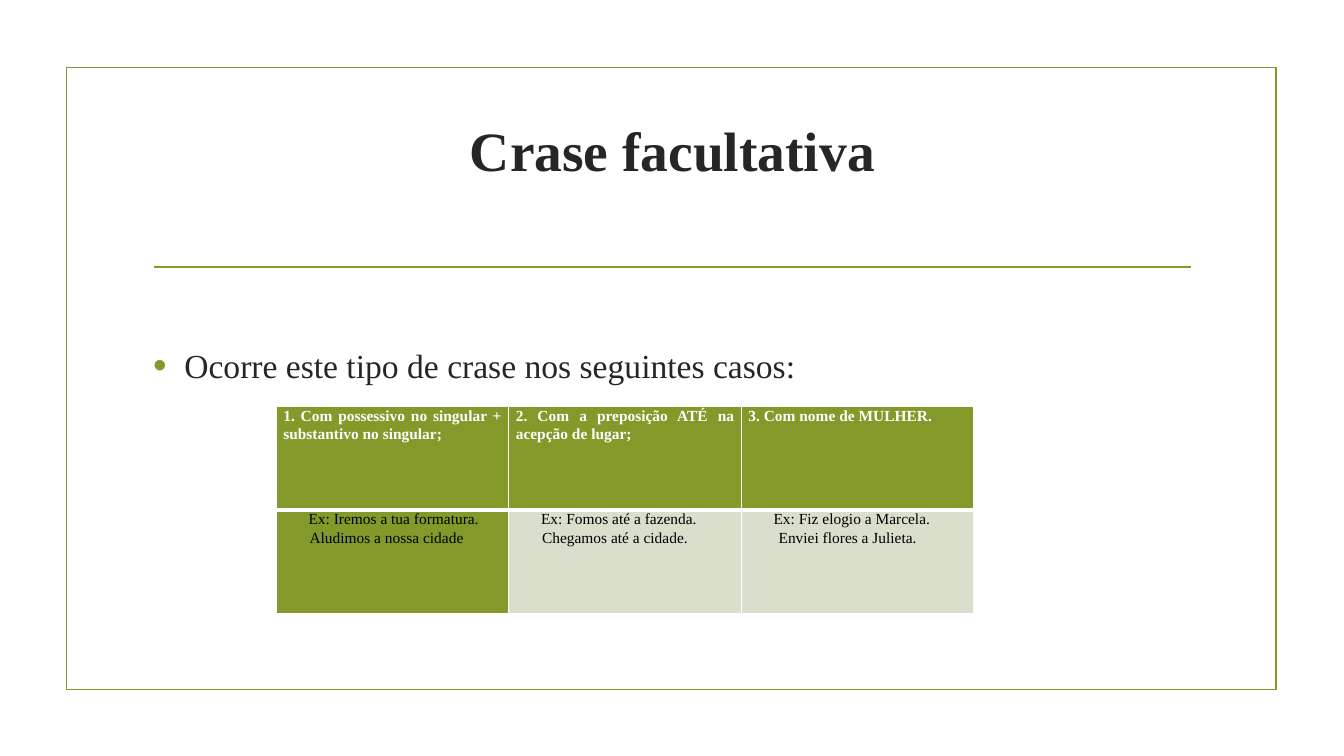
"""Build the slide on optional crase with its table of three cases."""
from lxml import etree
from pptx import Presentation
from pptx.dml.color import RGBColor
from pptx.enum import shapes, text
from pptx.oxml import parse_xml
from pptx.oxml.ns import nsdecls, qn
from pptx.util import Emu, Inches, Pt

COLORS = {"green": "83992A", "ink": "262626", "white": "FFFFFF", "black": "000000", "sage": "D9DECD"}
TITLE = "Crase facultativa"
INTRO = "Ocorre este tipo de crase nos seguintes casos:"
CASES = [
    ("1. Com possessivo no singular + substantivo no singular;",
     [("Ex: Iremos a tua formatura.", 0.25), ("Aludimos a nossa cidade", 0.26)], "green"),
    ("2. Com a preposição ATÉ na acepção de lugar;",
     [("Ex: Fomos até a fazenda.", 0.25), ("Chegamos até a cidade.", 0.26)], "sage"),
    ("3. Com nome de MULHER.",
     [("Ex: Fiz elogio a Marcela.", 0.25), ("Enviei flores a Julieta.", 0.3)], "sage"),
]
TITLE_FONT = {"size": Pt(39.6), "bold": True}
INTRO_FONT = {"size": Pt(24), "bold": False}
HEADING_FONT = {"size": Pt(11), "bold": True}
EXAMPLE_FONT = {"size": Pt(11), "bold": False}
CELL_FORMAT = {"margin_left": Inches(0.07), "margin_right": Inches(0.07), "margin_top": 0, "margin_bottom": 0}


def apply(target, values):
    for name, value in values.items():
        setattr(target, name, value)


def rgb(name):
    return RGBColor.from_string(COLORS[name])


def write(paragraph, words, font, color):
    run = paragraph.add_run()
    run.text = words
    apply(run.font, {"name": "Times New Roman", **font})
    run.font.color.rgb = rgb(color)


def stroke(line):
    line.color.rgb = rgb("green")
    line.width = Pt(1.25)


def add_bullet(paragraph):
    properties = paragraph._p.get_or_add_pPr()
    apply_indent = {"marL": Inches(0.31), "indent": Inches(-0.31)}
    for name, value in apply_indent.items():
        properties.set(name, str(value))
    for tag in (f'<a:buClr {nsdecls("a")}><a:srgbClr val="{COLORS["green"]}"/></a:buClr>',
                f'<a:buSzPct {nsdecls("a")} val="115000"/>',
                f'<a:buFont {nsdecls("a")} typeface="Arial"/>',
                f'<a:buChar {nsdecls("a")} char="•"/>'):
        properties.append(parse_xml(tag))


def format_cell(cell, fill, bottom, top):
    apply(cell, CELL_FORMAT)
    cell.fill.solid()
    cell.fill.fore_color.rgb = rgb(fill)
    properties = cell._tc.get_or_add_tcPr()
    for place, (side, width) in enumerate({"L": 1, "R": 1, "T": top, "B": bottom}.items()):
        properties.insert(place, parse_xml(
            f'<a:ln{side} {nsdecls("a")} w="{Pt(width)}"><a:solidFill>'
            f'<a:srgbClr val="{COLORS["white"]}"/></a:solidFill></a:ln{side}>'))


def fill_cell(cell, lines, font, color):
    for number, (words, indent) in enumerate(lines):
        frame = cell.text_frame
        paragraph = frame.add_paragraph() if number else frame.paragraphs[0]
        apply(paragraph, {"alignment": text.PP_ALIGN.JUSTIFY, "line_spacing": 1.07})
        paragraph._p.get_or_add_pPr().set("marL", str(Inches(indent)))
        write(paragraph, words, font, color)


def main():
    deck = Presentation()
    apply(deck, {"slide_width": Inches(13.33), "slide_height": Inches(7.5)})
    slide = deck.slides.add_slide(deck.slide_layouts[5])

    border = slide.shapes.add_shape(shapes.MSO_SHAPE.RECTANGLE, *map(Inches, (0.66, 0.67, 12, 6.17)))
    border.shadow.inherit = False
    border.fill.background()
    stroke(border.line)

    divider = slide.shapes.add_connector(
        shapes.MSO_CONNECTOR.STRAIGHT, *map(Inches, (1.53, 2.65, 11.81, 2.65)))
    stroke(divider.line)
    etree.SubElement(divider._element.spPr, qn("a:effectLst"))

    title = slide.shapes.title
    apply(title, {"left": Inches(1.42), "top": Inches(1.07), "width": Inches(10.5), "height": Inches(1.43)})
    apply(title.text_frame, {"auto_size": text.MSO_AUTO_SIZE.NONE, "word_wrap": True,
                             "vertical_anchor": text.MSO_ANCHOR.MIDDLE, "margin_bottom": Inches(0.65)})
    heading = title.text_frame.paragraphs[0]
    heading.alignment = text.PP_ALIGN.CENTER
    write(heading, TITLE, TITLE_FONT, "ink")

    body = slide.shapes.add_textbox(*map(Inches, (1.42, 2.8, 10.5, 3.63)))
    apply(body.text_frame, {"word_wrap": True, "margin_top": Inches(0.62)})
    intro = body.text_frame.paragraphs[0]
    add_bullet(intro)
    write(intro, INTRO, INTRO_FONT, "ink")

    table = slide.shapes.add_table(2, len(CASES), *map(Inches, (2.74, 4.03, 6.92, 2.06))).table
    for column, (rule, examples, fill) in enumerate(CASES):
        table.columns[column].width = Emu(Inches(6.92) // len(CASES))
        header, example = table.cell(0, column), table.cell(1, column)
        format_cell(header, "green", bottom=3, top=1)
        format_cell(example, fill, bottom=1, top=3)
        fill_cell(header, [(rule, 0)], HEADING_FONT, "white")
        fill_cell(example, examples, EXAMPLE_FONT, "black")

    deck.save("out.pptx")


if __name__ == "__main__":
    main()
